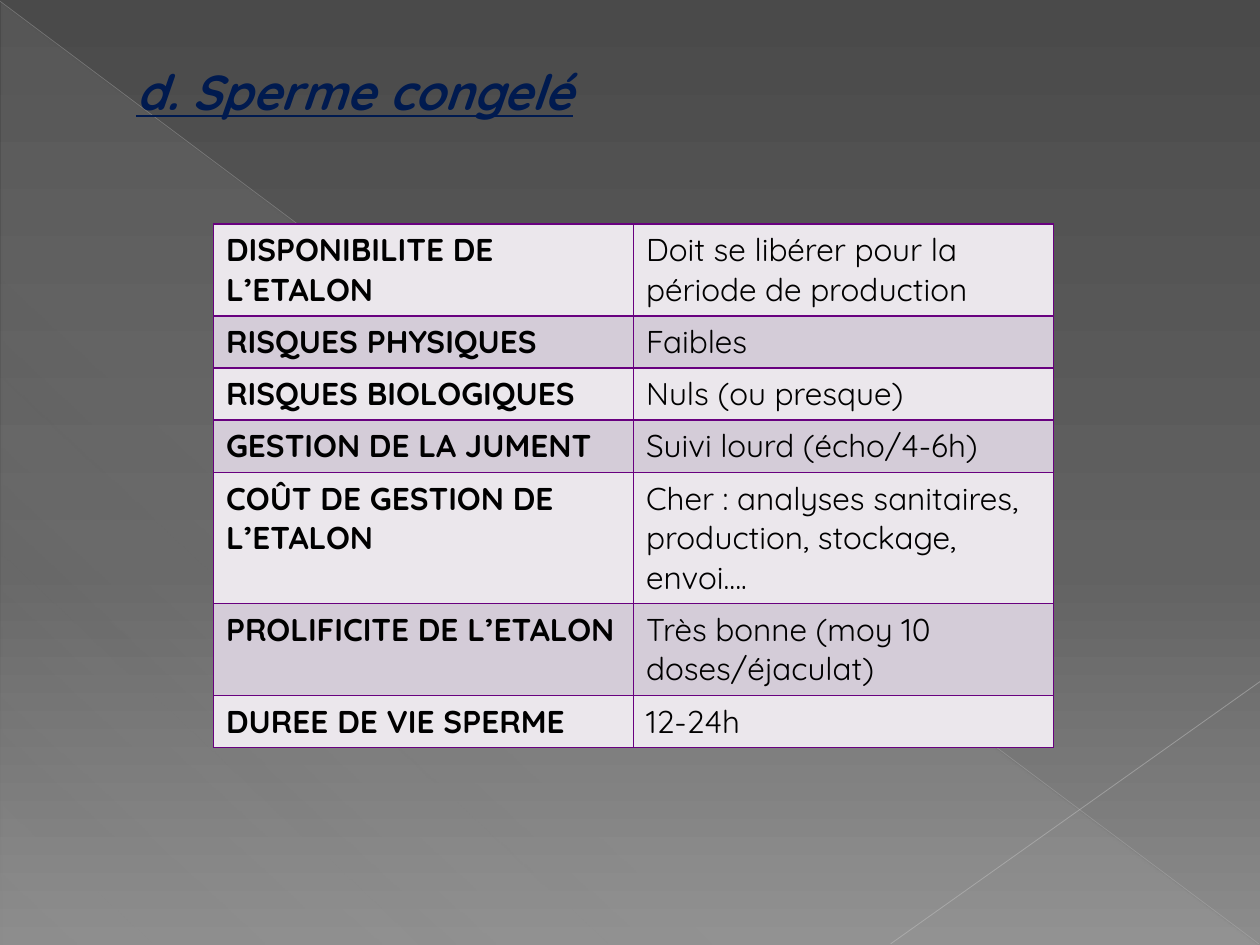
from lxml.etree import SubElement
from pptx import Presentation
from pptx.dml.color import RGBColor
from pptx.enum.shapes import MSO_CONNECTOR, MSO_SHAPE
from pptx.enum.text import MSO_ANCHOR, MSO_AUTO_SIZE, PP_ALIGN
from pptx.oxml.ns import qn
from pptx.util import Pt

FONT = "Quicksand"
DARK, MID, PALE = RGBColor(0x4A, 0x4A, 0x4A), RGBColor(0x62, 0x62, 0x62), RGBColor(0x8C, 0x8C, 0x8C)
HAZE = RGBColor(0xD2, 0xD2, 0xD2)
GREY, SILVER = RGBColor(0xBF, 0xBF, 0xBF), RGBColor(0xC6, 0xC6, 0xC6)
NAVY, BLACK = RGBColor(0x00, 0x1A, 0x4F), RGBColor(0, 0, 0)
PURPLE = RGBColor(0x68, 0x00, 0x7F)
BANDS = RGBColor(0xEB, 0xE7, 0xEC), RGBColor(0xD4, 0xCC, 0xD8)

# Label, remark and row height
ROWS = [
    ("DISPONIBILITE DE L’ETALON", "Doit se libérer pour la période de production", 52.5),
    ("RISQUES PHYSIQUES", "Faibles", 29.8),
    ("RISQUES BIOLOGIQUES", "Nuls (ou presque)", 29.8),
    ("GESTION DE LA JUMENT", "Suivi lourd (écho/4-6h)", 29.8),
    ("COÛT DE GESTION DE L’ETALON", "Cher : analyses sanitaires, production, stockage, envoi….", 75),
    ("PROLIFICITE DE L’ETALON", "Très bonne (moy 10 doses/éjaculat)", 52.5),
    ("DUREE DE VIE SPERME", "12-24h", 29.8),
]


def add_color(parent, color, alpha=100):
    node = SubElement(parent, qn("a:srgbClr"), val=str(color))
    if alpha < 100:
        SubElement(node, qn("a:alpha"), val=str(alpha * 1000))


def set_grad(fill, owner, stops, angle):
    """Fill with (position, colour, opacity) stops, clockwise angle."""
    fill.gradient()
    grad = owner.find(".//" + qn("a:gradFill"))
    for child in list(grad):
        grad.remove(child)
    group = SubElement(grad, qn("a:gsLst"))
    for pos, color, alpha in stops:
        add_color(SubElement(group, qn("a:gs"), pos=str(pos * 1000)), color, alpha)
    SubElement(grad, qn("a:lin"), ang=str(angle * 60000), scaled="0")


def add_haze(slide):
    shape = slide.shapes.add_shape(
        MSO_SHAPE.RIGHT_TRIANGLE, Pt(0.7), Pt(1.4), Pt(718.6), Pt(538.6))
    shape.shadow.inherit = False
    shape.line.fill.background()
    stops = [(0, HAZE, 10), (70, HAZE, 8), (100, HAZE, 1)]
    set_grad(shape.fill, shape.element, stops, 133)


def add_line(slide, start, end, color, width, alpha):
    line = slide.shapes.add_connector(
        MSO_CONNECTOR.STRAIGHT, *map(Pt, start), *map(Pt, end))
    line.line.width = Pt(width)
    line.line.color.rgb = color
    props = line.element.spPr
    tint = props.find(".//" + qn("a:srgbClr"))
    SubElement(tint, qn("a:alpha"), val=str(alpha * 1000))
    SubElement(props, qn("a:effectLst"))


def fill_cell(cell, text, bold, color):
    cell.text = text
    font = cell.text_frame.paragraphs[0].font
    font.name, font.size, font.bold = FONT, Pt(18), bold
    font.color.rgb = BLACK
    # Borders come before the fill in the cell properties
    props = cell._tc.get_or_add_tcPr()
    for side in ("lnL", "lnR", "lnT", "lnB"):
        edge = SubElement(props, qn("a:" + side), w=str(Pt(1)))
        add_color(SubElement(edge, qn("a:solidFill")), PURPLE)
    cell.fill.solid()
    cell.fill.fore_color.rgb = color


def add_grid(slide):
    total = sum(row[2] for row in ROWS)
    table = slide.shapes.add_table(
        len(ROWS), 2, Pt(122), Pt(128), Pt(480), Pt(total)).table
    table.first_row = table.horz_banding = False
    for i, (label, remark, height) in enumerate(ROWS):
        table.rows[i].height = Pt(height)
        color = BANDS[i % 2]
        fill_cell(table.cell(i, 0), label, True, color)
        fill_cell(table.cell(i, 1), remark, False, color)


def set_title(slide, text):
    title = slide.shapes.title
    title.left, title.top = Pt(70.6), Pt(31.7)
    title.width, title.height = Pt(276.5), Pt(41)
    frame = title.text_frame
    frame.text = text
    frame.word_wrap = False
    frame.auto_size = MSO_AUTO_SIZE.SHAPE_TO_FIT_TEXT
    frame.vertical_anchor = MSO_ANCHOR.TOP
    para = frame.paragraphs[0]
    para.alignment = PP_ALIGN.LEFT
    font = para.font
    font.name, font.size, font.color.rgb = FONT, Pt(28), NAVY
    font.bold = font.italic = font.underline = True
    # Bring the title in front of the decor
    slide.shapes.element.append(title.element)


def main():
    deck = Presentation()
    deck.slide_width, deck.slide_height = Pt(720), Pt(540)
    slide = deck.slides.add_slide(deck.slide_layouts[5])

    # Background and decor
    stops = [(0, DARK, 100), (60, MID, 100), (100, PALE, 100)]
    set_grad(slide.background.fill, slide.element, stops, 90)
    add_haze(slide)
    add_line(slide, (0, 0.7), (719.3, 539.3), GREY, 0.39, 35)
    add_line(slide, (720, 389.5), (509, 539.3), SILVER, 0.47, 45)

    # Content
    add_grid(slide)
    set_title(slide, "d. Sperme congelé")
    deck.save("out.pptx")


if __name__ == "__main__":
    main()
